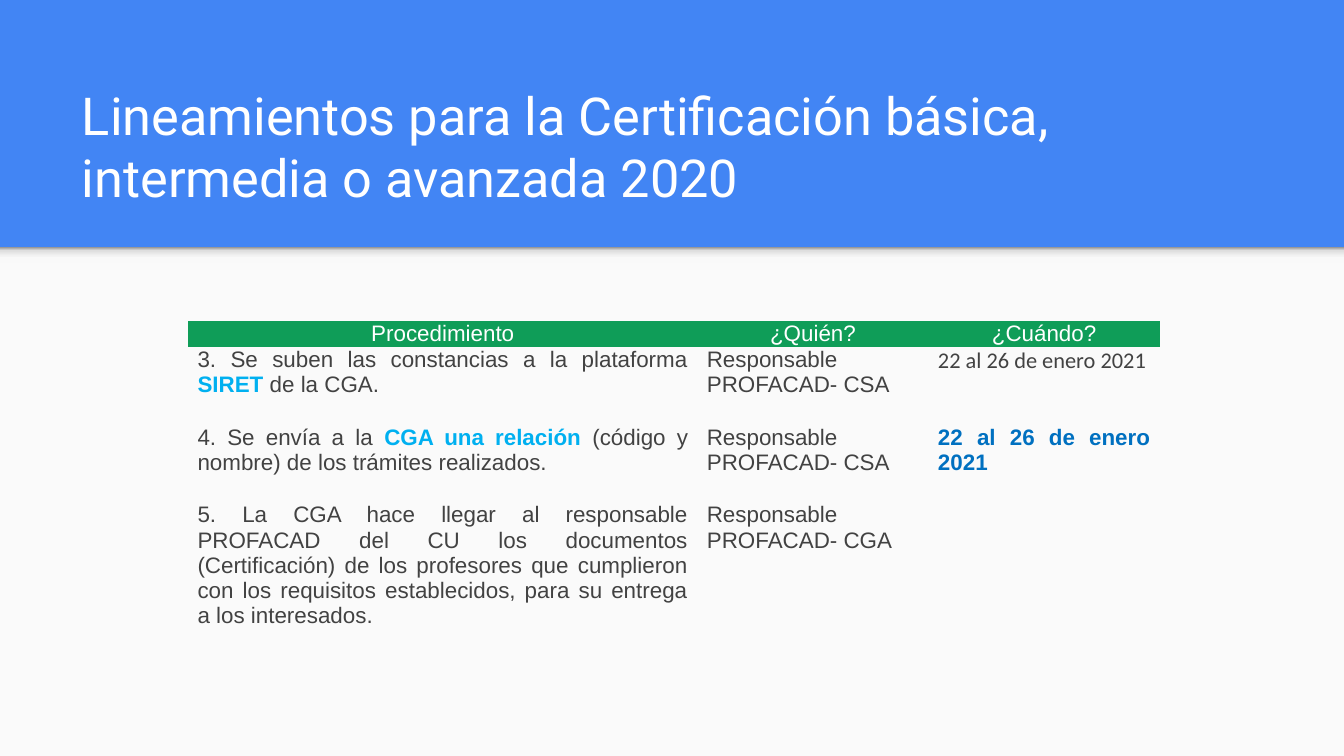
import copy

import pptx
import pptx.dml.color
import pptx.enum.shapes
import pptx.enum.text
import pptx.oxml.ns
import pptx.util

Inches = pptx.util.Inches
Align = pptx.enum.text.PP_ALIGN
WIDE = 10
HIGH = WIDE * 9 / 16
EDGE = 1.84
COLORS = {
    "blue": "4285F4", "paper": "FAFAFA", "white": "FFFFFF", "green": "0F9D58",
    "text": "424242", "sky": "00B0F0", "navy": "0070C0",
}
SHADE = [(0, "F9F9F9"), (0.36, "F9F9F9"), (0.8, "DEDEDE"), (1, "999999")]
PLAIN_STYLE = "{2D5ABB26-0587-4C30-8999-92F81FD0307C}"


def rgb(code):
    return pptx.dml.color.RGBColor.from_string(code)


class Deck:
    font, size = "Arial", 12

    def __init__(self, wide, high):
        self.file = pptx.Presentation()
        self.file.slide_width = Inches(wide)
        self.file.slide_height = Inches(high)
        self.slide = self.file.slides.add_slide(self.file.slide_layouts[5])

    def ground(self, color):
        fill = self.slide.background.fill
        fill.solid()
        fill.fore_color.rgb = rgb(COLORS[color])

    def rect(self, box, color=None, stops=()):
        kind = pptx.enum.shapes.MSO_SHAPE.RECTANGLE
        shape = self.slide.shapes.add_shape(kind, *map(Inches, box))
        shape.shadow.inherit = False
        shape.line.fill.background()
        if stops:
            self.fade(shape, stops)
        else:
            shape.fill.solid()
            shape.fill.fore_color.rgb = rgb(COLORS[color])

    def fade(self, shape, stops):
        shape.fill.gradient()
        shape.fill.gradient_angle = 90
        group = shape._element.spPr.find(".//" + pptx.oxml.ns.qn("a:gsLst"))
        while len(group) < len(stops):
            group.append(copy.deepcopy(group[0]))
        for stop, (place, code) in zip(shape.fill.gradient_stops, stops):
            stop.position = place
            stop.color.rgb = rgb(code)

    def run(self, para, text, color="text", bold=False, font=None, size=None):
        run = para.add_run()
        run.text = text
        run.font.name = font or self.font
        run.font.size = pptx.util.Pt(size or self.size)
        run.font.bold = bold
        run.font.color.rgb = rgb(COLORS[color])

    def title(self, box, text):
        shape = self.slide.shapes.title
        shape.left, shape.top, shape.width, shape.height = map(Inches, box)
        frame = shape.text_frame
        frame.word_wrap = True
        frame.auto_size = pptx.enum.text.MSO_AUTO_SIZE.NONE
        frame.vertical_anchor = pptx.enum.text.MSO_ANCHOR.BOTTOM
        frame.margin_left = frame.margin_right = Inches(0.1)
        frame.margin_top = frame.margin_bottom = Inches(0.1)
        para = frame.paragraphs[0]
        para.alignment = Align.LEFT
        self.run(para, text, "white", font="Roboto", size=28)

    def table(self, left, top, cols, rows, data):
        frame = self.slide.shapes.add_table(
            len(rows), len(cols), Inches(left), Inches(top),
            Inches(sum(cols)), Inches(sum(rows)))
        table = frame.table
        table.first_row = table.horz_banding = False
        style = pptx.oxml.ns.qn("a:tableStyleId")
        table._tbl.tblPr.find(style).text = PLAIN_STYLE
        for col, width in zip(table.columns, cols):
            col.width = Inches(width)
        for row, high, line in zip(table.rows, rows, data):
            row.height = Inches(high)
            for cell, runs in zip(row.cells, line):
                self.cell(cell, runs, line is data[0])

    def cell(self, cell, runs, head):
        cell.margin_left = cell.margin_right = Inches(0.07)
        cell.margin_top = cell.margin_bottom = 0
        if head:
            cell.fill.solid()
            cell.fill.fore_color.rgb = rgb(COLORS["green"])
        else:
            cell.fill.background()
        para = cell.text_frame.paragraphs[0]
        para.alignment = Align.CENTER if head else Align.JUSTIFY
        for item in runs:
            self.run(para, *item)


def main():
    deck = Deck(WIDE, HIGH)

    # Blue band above a light page, with a soft edge between
    deck.ground("blue")
    deck.rect((0, EDGE, WIDE, HIGH - EDGE), "paper")
    deck.rect((0, EDGE, WIDE, 0.12), stops=SHADE)
    deck.title((0.51, 0.81, 8.99, 0.84),
               "Lineamientos para la Certificación básica, "
               "intermedia o avanzada 2020")

    # Steps, who does them and when
    staff = [("Responsable PROFACAD- CSA",)]
    dates = "22 al 26 de enero 2021"
    heads = ["Procedimiento", "¿Quién?", "¿Cuándo?"]
    data = [
        [[(head, "white")] for head in heads],
        [[("3. Se suben las constancias a la plataforma ",),
          ("SIRET", "sky", True), (" de la CGA. ",)],
         staff, [(dates, "text", False, "Calibri")]],
        [[("4. Se envía a la ",), ("CGA una relación", "sky", True),
          (" (código y nombre) de los trámites realizados.",)],
         staff, [(dates, "navy", True)]],
        [[("5. La CGA hace llegar al responsable PROFACAD del CU los "
           "documentos (Certificación) de los profesores que cumplieron con "
           "los requisitos establecidos, para su entrega a los interesados.",)],
         [("Responsable PROFACAD- CGA",)], []],
    ]
    deck.table(1.4, 2.39, [3.79, 1.72, 1.72], [0.19, 0.58, 0.58, 0.97], data)

    deck.file.save("out.pptx")


if __name__ == "__main__":
    main()
